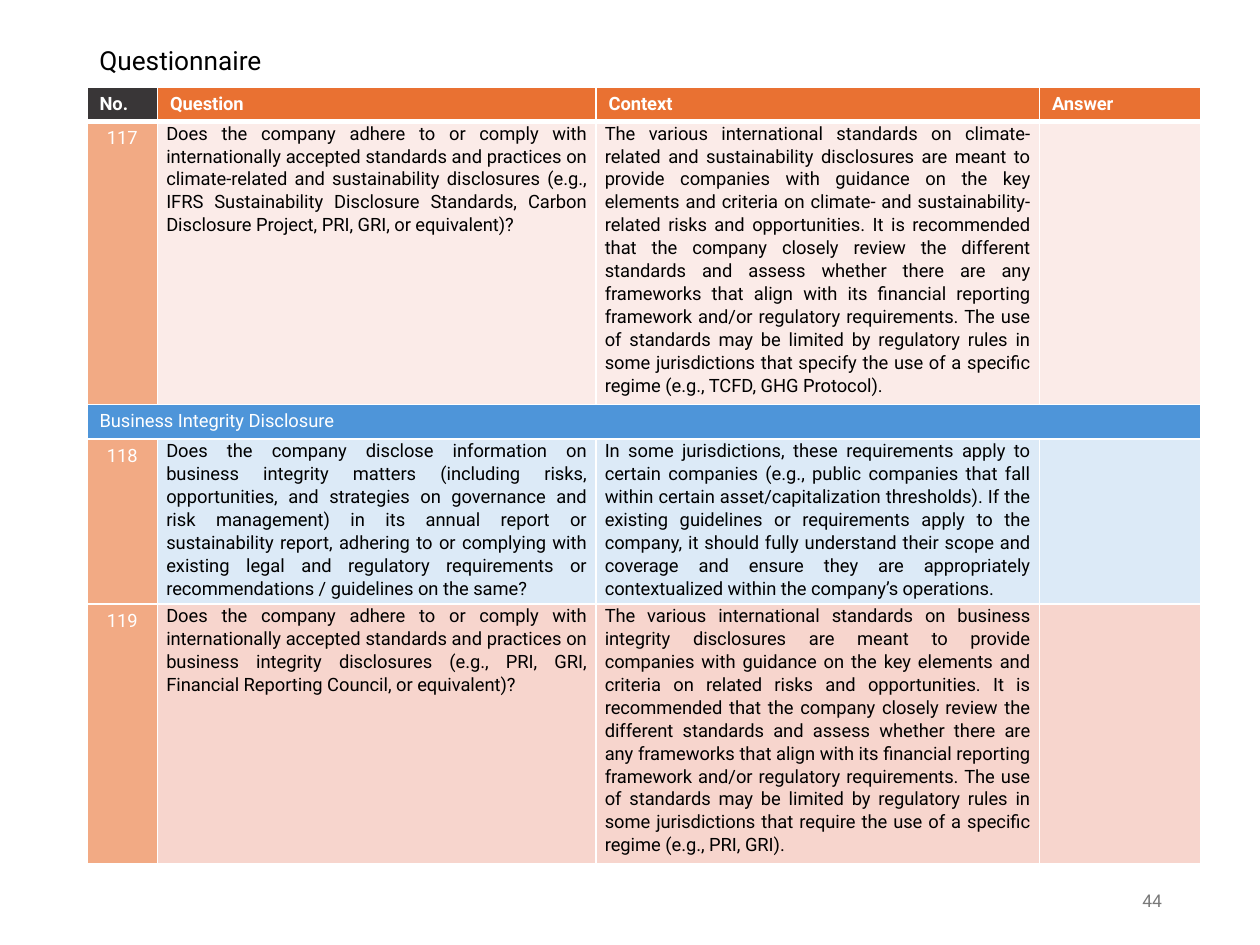
import pptx
import pptx.util
import pptx.dml.color
import pptx.enum.text
import pptx.oxml
import pptx.oxml.ns

Inches, Pt = pptx.util.Inches, pptx.util.Pt
ALIGN = pptx.enum.text.PP_ALIGN
MIDDLE = pptx.enum.text.MSO_ANCHOR.MIDDLE
W, H = 10, 7.5


def style(p, size, color, align=ALIGN.LEFT, bold=False):
    p.alignment = align
    p.font.name, p.font.size, p.font.bold = "Roboto", Pt(size), bold
    p.font.color.rgb = pptx.dml.color.RGBColor.from_string(color)


def paint(cell, fill, top=1, bottom=1):
    cell.fill.solid()
    cell.fill.fore_color.rgb = pptx.dml.color.RGBColor.from_string(fill)
    tcPr = cell._tc.get_or_add_tcPr()
    for i, (side, width) in enumerate(zip("LRTB", (1, 1, top, bottom))):
        tcPr.insert(i, pptx.oxml.parse_xml(
            f'<a:ln{side} {pptx.oxml.ns.nsdecls("a")} w="{Pt(width)}">'
            f'<a:solidFill><a:srgbClr val="FFFFFF"/></a:solidFill></a:ln{side}>'))


prs = pptx.Presentation()
prs.slide_width, prs.slide_height = Inches(W), Inches(H)
s = prs.slides.add_slide(prs.slide_layouts[6])

# Title and page number
for text, x, y, w, h, size, color, align in (
        ("Questionnaire", 0.069, 0.036, 0.862, 0.056, 15, "000000", ALIGN.LEFT),
        ("44", 0.658, 0.927, 0.274, 0.053, 10, "797979", ALIGN.RIGHT)):
    tf = s.shapes.add_textbox(Inches(x * W), Inches(y * H), Inches(w * W), Inches(h * H)).text_frame
    tf.word_wrap, tf.vertical_anchor = True, MIDDLE
    p = tf.paragraphs[0]
    p.text = text
    style(p, size, color, align)

# Table content: a row with one entry is a section band
header = ("No.", "Question", "Context", "Answer")
rows = [
    ("FBEBE8", "117",
     "Does the company adhere to or comply with internationally accepted standards and practices on "
     "climate-related and sustainability disclosures (e.g., IFRS Sustainability Disclosure Standards, "
     "Carbon Disclosure Project, PRI, GRI, or equivalent)?",
     "The various international standards on climate-related and sustainability disclosures are meant to "
     "provide companies with guidance on the key elements and criteria on climate- and "
     "sustainability-related risks and opportunities. It is recommended that the company closely review "
     "the different standards and assess whether there are any frameworks that align with its financial "
     "reporting framework and/or regulatory requirements. The use of standards may be limited by "
     "regulatory rules in some jurisdictions that specify the use of a specific regime (e.g., TCFD, GHG "
     "Protocol)."),
    ("4E95D9", "Business Integrity Disclosure"),
    ("DCEAF7", "118",
     "Does the company disclose information on business integrity matters (including risks, "
     "opportunities, and strategies on governance and risk management) in its annual report or "
     "sustainability report, adhering to or complying with existing legal and regulatory requirements or "
     "recommendations / guidelines on the same?",
     "In some jurisdictions, these requirements apply to certain companies (e.g., public companies that "
     "fall within certain asset/capitalization thresholds). If the existing guidelines or requirements "
     "apply to the company, it should fully understand their scope and coverage and ensure they are "
     "appropriately contextualized within the company’s operations."),
    ("F7D5CD", "119",
     "Does the company adhere to or comply with internationally accepted standards and practices on "
     "business integrity disclosures (e.g., PRI, GRI, Financial Reporting Council, or equivalent)?",
     "The various international standards on business integrity disclosures are meant to provide "
     "companies with guidance on the key elements and criteria on related risks and opportunities. It is "
     "recommended that the company closely review the different standards and assess whether there are "
     "any frameworks that align with its financial reporting framework and/or regulatory requirements. "
     "The use of standards may be limited by regulatory rules in some jurisdictions that require the use "
     "of a specific regime (e.g., PRI, GRI)."),
]

# Table grid
col_widths = (0.56, 3.48, 3.52, 1.28)
row_heights = (0.27, 2.17, 0.27, 1.27, 2)
table = s.shapes.add_table(len(row_heights), len(col_widths), Inches(0.069 * W), Inches(0.092 * H),
                           Inches(sum(col_widths)), Inches(sum(row_heights))).table
table.first_row = table.horz_banding = False
for col, width in zip(table.columns, col_widths):
    col.width = Inches(width)
for row, height in zip(table.rows, row_heights):
    row.height = Inches(height)

# Header row
for c, text in enumerate(header):
    cell = table.cell(0, c)
    cell.text = text
    style(cell.text_frame.paragraphs[0], 10.5, "FFFFFF", bold=True)
    paint(cell, "E97132" if c else "393637", bottom=3)

# Question rows and section band
for r, (fill, *texts) in enumerate(rows, 1):
    band = len(texts) == 1
    if band:
        table.cell(r, 0).merge(table.cell(r, len(header) - 1))
    for c in range(len(header)):
        cell = table.cell(r, c)
        p = cell.text_frame.paragraphs[0]
        if c < len(texts):
            p.text = texts[c]
        if c == 0:
            style(p, 10.5, "FFFFFF", ALIGN.LEFT if band else ALIGN.CENTER)
        else:
            style(p, 10.5, "000000", ALIGN.JUSTIFY)
        if c in (1, 2) and not band:
            p.line_spacing, p.space_after = 1.07, Pt(2)
            cell.margin_left = cell.margin_right = Inches(0.07)
            cell.margin_top = cell.margin_bottom = 0
        paint(cell, fill if c or band else "F2AA84", top=3 if r == 1 else 1)

prs.save("out.pptx")
